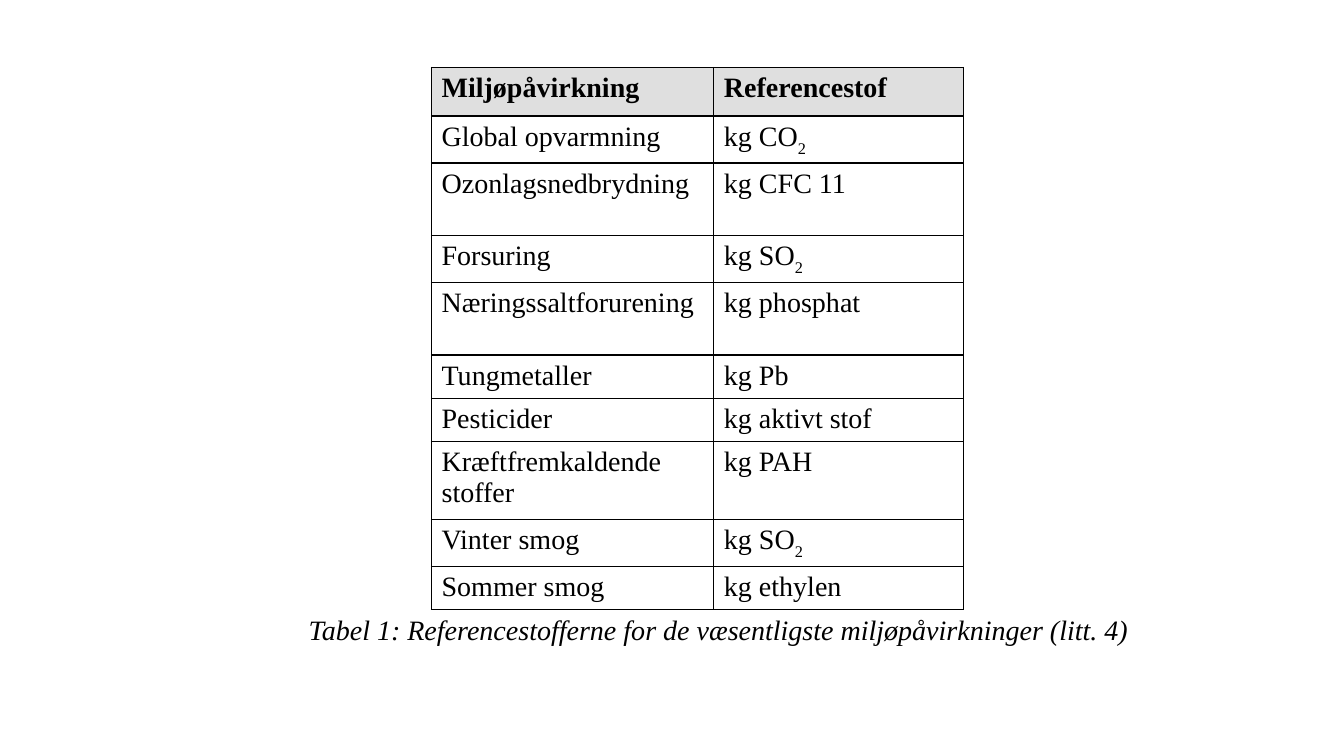
from lxml.etree import SubElement
from pptx import Presentation
from pptx.dml.color import RGBColor
from pptx.enum.text import MSO_ANCHOR, MSO_AUTO_SIZE, PP_ALIGN
from pptx.oxml.ns import qn
from pptx.util import Inches, Pt

COLORS = {"text": "000000", "border": "000000", "header": "DFDFDF"}

COLUMN_WIDTHS = [2.8, 2.48]
LINE_HEIGHT = 0.43

# Impact, reference substance, subscript, row height
ROWS = [
    ("Miljøpåvirkning", "Referencestof", "", 0.48),
    ("Global opvarmning", "kg CO", "2", LINE_HEIGHT),
    ("Ozonlagsnedbrydning", "kg CFC 11", "", 0.72),
    ("Forsuring", "kg SO", "2", LINE_HEIGHT),
    ("Næringssaltforurening", "kg phosphat", "", 0.72),
    ("Tungmetaller", "kg Pb", "", LINE_HEIGHT),
    ("Pesticider", "kg aktivt stof", "", LINE_HEIGHT),
    ("Kræftfremkaldende stoffer", "kg PAH", "", 0.77),
    ("Vinter smog", "kg SO", "2", LINE_HEIGHT),
    ("Sommer smog", "kg ethylen", "", LINE_HEIGHT),
]


class SlideBuilder:
    font_name = "Times New Roman"
    font_size = Pt(20)
    border_width = Pt(1)

    def __init__(self, slide):
        self.slide = slide

    def add_run(self, paragraph, text, bold=False, italic=False, subscript=False):
        run = paragraph.add_run()
        run.text = text
        font = run.font
        font.name, font.size = self.font_name, self.font_size
        font.bold, font.italic = bold, italic
        font.color.rgb = RGBColor.from_string(COLORS["text"])
        if subscript:
            font._element.set("baseline", "-30000")

    def add_borders(self, cell):
        properties = cell._tc.get_or_add_tcPr()
        for position, side in enumerate(("lnL", "lnR", "lnT", "lnB")):
            line = SubElement(properties, qn(f"a:{side}"), w=str(self.border_width))
            fill = SubElement(line, qn("a:solidFill"))
            SubElement(fill, qn("a:srgbClr"), val=COLORS["border"])
            properties.insert(position, line)

    def style_cell(self, cell, header):
        cell.margin_left = cell.margin_right = Inches(0.1)
        cell.margin_top = cell.margin_bottom = Inches(0.05)
        if header:
            cell.fill.solid()
            cell.fill.fore_color.rgb = RGBColor.from_string(COLORS["header"])
        else:
            cell.fill.background()
        self.add_borders(cell)

    def add_table(self, left, top, widths, rows):
        height = sum(row[-1] for row in rows)
        frame = self.slide.shapes.add_table(
            len(rows), len(widths), Inches(left), Inches(top),
            Inches(sum(widths)), Inches(height))
        table = frame.table
        table.horz_banding = False
        for column, width in zip(table.columns, widths):
            column.width = Inches(width)
        for index, (impact, substance, subscript, row_height) in enumerate(rows):
            header = index == 0
            table.rows[index].height = Inches(row_height)
            for column, text in enumerate((impact, substance)):
                cell = table.cell(index, column)
                self.style_cell(cell, header)
                paragraph = cell.text_frame.paragraphs[0]
                self.add_run(paragraph, text, bold=header)
            if subscript:
                self.add_run(paragraph, subscript, subscript=True)

    def add_caption(self, left, top, width, height, text):
        box = self.slide.shapes.add_textbox(
            Inches(left), Inches(top), Inches(width), Inches(height))
        frame = box.text_frame
        frame.word_wrap = False
        frame.auto_size = MSO_AUTO_SIZE.SHAPE_TO_FIT_TEXT
        frame.vertical_anchor = MSO_ANCHOR.MIDDLE
        paragraph = frame.paragraphs[0]
        paragraph.alignment = PP_ALIGN.CENTER
        self.add_run(paragraph, text, italic=True)


def main():
    presentation = Presentation()
    presentation.slide_width = Inches(13.33)
    presentation.slide_height = Inches(7.5)
    slide = presentation.slides.add_slide(presentation.slide_layouts[6])
    builder = SlideBuilder(slide)

    # Reference substances
    builder.add_table(4.28, 0.67, COLUMN_WIDTHS, ROWS)

    # Table caption
    builder.add_caption(
        2.96, 6.03, 8.34, 0.43,
        "Tabel 1: Referencestofferne for de væsentligste miljøpåvirkninger (litt. 4)")

    presentation.save("out.pptx")


if __name__ == "__main__":
    main()
